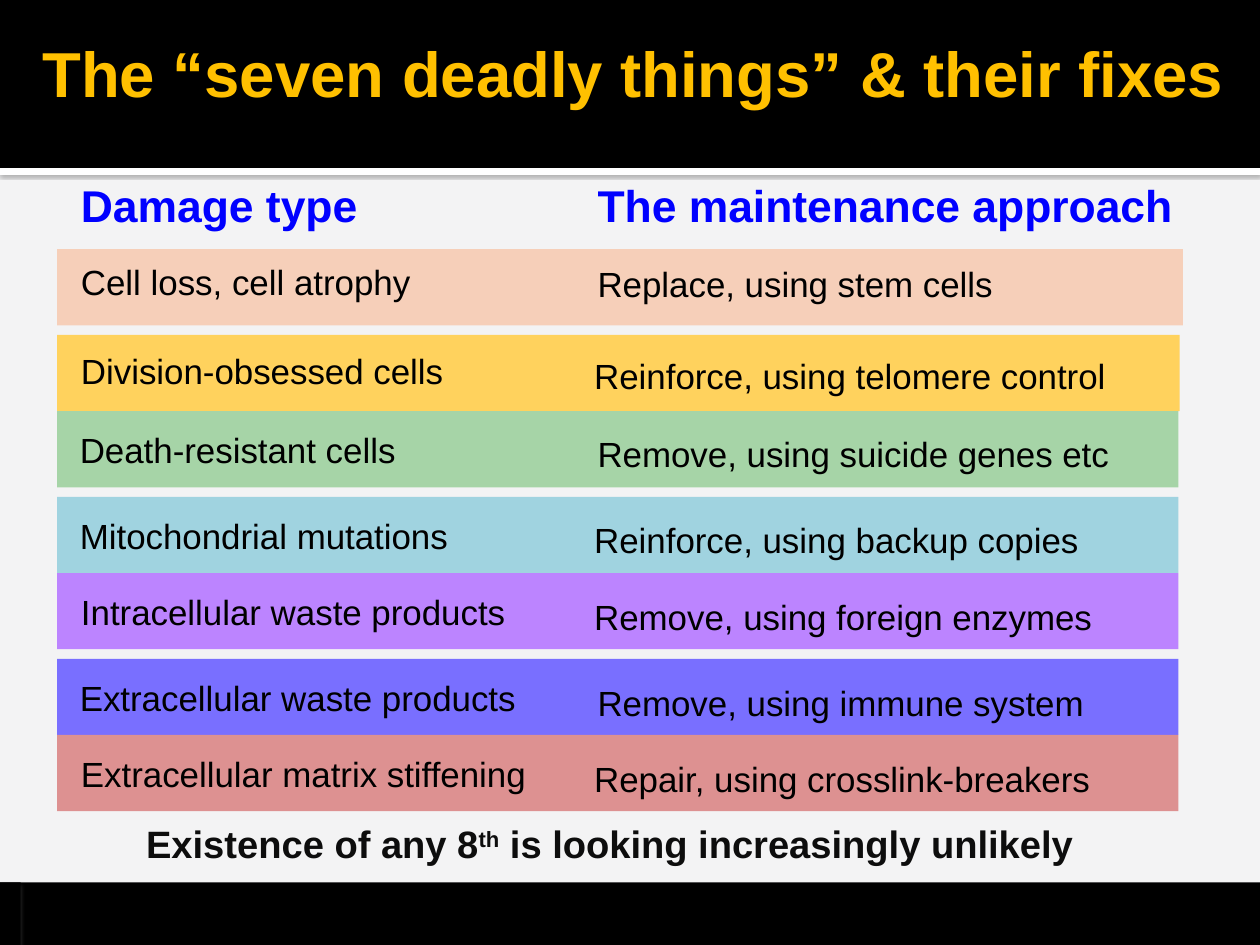
from lxml import etree
from pptx import Presentation
from pptx.dml.color import RGBColor
from pptx.enum.shapes import MSO_SHAPE as SHAPE
from pptx.enum.text import MSO_ANCHOR as ANCHOR, MSO_AUTO_SIZE as AUTO, PP_ALIGN as ALIGN
from pptx.oxml.ns import qn
from pptx.util import Inches, Pt

COLORS = {
    "background": "F3F3F4", "black": "000000", "white": "FFFFFF",
    "shadow": "808080", "title": "FFC000", "heading": "0000FF", "closing": "0D0D0D",
    "peach": "F6CFB9", "yellow": "FFD25D", "green": "A6D4A7", "blue": "A0D3E0",
    "purple": "BC84FF", "indigo": "796FFF", "red": "DD9191",
}
FONT = "Arial"
CM_PER_INCH = 2.54
SLIDE_W, SLIDE_H = 28 / CM_PER_INCH, 21 / CM_PER_INCH
HEADER_H, FOOTER_TOP, FOOTER_H = 1.47, 7.72, 0.55
ROW_LEFT, ROW_TOP, ROW_H, PAIR_GAP = 0.5, 2.18, 2 / 3, 1 / 12

# Colour, bar width, then text, left, drop and width of the damage and of its fix
ROWS = [
    ("peach", 9.85, ("Cell loss, cell atrophy", 0.61, 0.08, 3.48),
     ("Replace, using stem cells", 5.13, 0.07, 4.64)),
    ("yellow", 9.82, ("Division-obsessed cells", 0.61, 0.11, 3.48),
     ("Reinforce, using telomere control", 5.1, 0.12, 4.92)),
    ("green", 9.81, ("Death-resistant cells", 0.6, 0.14, 3.48),
     ("Remove, using suicide genes etc", 5.13, 0.14, 4.97)),
    ("blue", 9.81, ("Mitochondrial mutations", 0.6, 0.14, 3.48),
     ("Reinforce, using backup copies", 5.1, 0.14, 4.92)),
    ("purple", 9.81, ("Intracellular waste products", 0.61, 0.14, 4.15),
     ("Remove, using foreign enzymes", 5.1, 0.15, 4.92)),
    ("indigo", 9.81, ("Extracellular waste products", 0.6, 0.14, 4.17),
     ("Remove, using immune system", 5.13, 0.15, 5.47)),
    ("red", 9.81, ("Extracellular matrix stiffening", 0.61, 0.14, 4.32),
     ("Repair, using crosslink-breakers", 5.1, 0.15, 5)),
]
HEADINGS = [("Damage type", 0.61, 2.9), ("The maintenance approach", 5.13, 5.38)]


def rgb(name):
    """Return the named colour."""
    return RGBColor.from_string(COLORS[name])


def add_bar(s, left, top, width, height, color):
    """Add a plain filled rectangle."""
    sp = s.shapes.add_shape(SHAPE.RECTANGLE, Inches(left), Inches(top),
                            Inches(width), Inches(height))
    sp.shadow.inherit = False
    sp.fill.solid()
    sp.fill.fore_color.rgb = rgb(color)
    sp.line.fill.background()
    return sp


def add_shadow(sp, alpha, blur, dist):
    """Give a shape a soft shadow that falls straight down."""
    effects = sp._element.spPr.find(qn("a:effectLst"))
    shadow = etree.SubElement(effects, qn("a:outerShdw"), blurRad=str(Pt(blur)),
                              dist=str(Pt(dist)), dir="5400000", rotWithShape="0")
    color = etree.SubElement(shadow, qn("a:srgbClr"), val=COLORS["shadow"])
    etree.SubElement(color, qn("a:alpha"), val=str(alpha * 1000))


def add_run(p, text, size=22, color="black", bold=False, baseline=0):
    """Add a formatted run to a paragraph."""
    r = p.add_run()
    r.text = text
    r.font.name = FONT
    r.font.size = Pt(size)
    r.font.bold = bold
    r.font.color.rgb = rgb(color)
    if baseline:
        r.font._element.set("baseline", str(baseline * 1000))


def add_text(s, text, left, top, width, height, spacing=None, **style):
    """Add a wrapped text box and return its paragraph."""
    tf = s.shapes.add_textbox(Inches(left), Inches(top), Inches(width), Inches(height)).text_frame
    tf.word_wrap = True
    p = tf.paragraphs[0]
    if spacing:
        p.line_spacing = spacing
    add_run(p, text, **style)
    return p


def add_frame(s):
    """Add the black header and footer with the white rule between."""
    add_bar(s, 0, FOOTER_TOP, SLIDE_W, FOOTER_H, "black")
    rule = add_bar(s, 0, HEADER_H, SLIDE_W, 0.06, "white")
    add_shadow(rule, 60, 2.5, 0.8)
    header = add_bar(s, 0, 0, SLIDE_W, HEADER_H, "black")
    corner = add_bar(s, 0, FOOTER_TOP, 0.18, FOOTER_H, "black")
    add_shadow(corner, 38, 3.1, 2)
    return header


def set_title(s, header, text):
    """Place the title in front of the header."""
    title = s.shapes.title
    header._element.addnext(title._element)
    title.left, title.top = Inches(0), Inches(-0.12)
    title.width, title.height = Inches(SLIDE_W), Inches(1.51)
    tf = title.text_frame
    tf.auto_size = AUTO.NONE
    tf.word_wrap = True
    tf.vertical_anchor = ANCHOR.MIDDLE
    tf.margin_left = Inches(0.11)
    tf.margin_right = tf.margin_top = tf.margin_bottom = Inches(0.06)
    p = tf.paragraphs[0]
    p.alignment = ALIGN.CENTER
    add_run(p, text, size=40, color="title", bold=True)


def add_rows(s):
    """Add the coloured rows, with a gap before every second one."""
    for i, (color, bar_width, damage, fix) in enumerate(ROWS):
        top = ROW_TOP + i * ROW_H + (i + 1) // 2 * PAIR_GAP
        add_bar(s, ROW_LEFT, top, bar_width, ROW_H, color)
        for (text, left, drop, width), height, spacing in ((damage, 0.45, 0.93), (fix, 0.47, None)):
            add_text(s, text, left, top + drop, width, height, spacing)


def main():
    """Build and save the slide."""
    prs = Presentation()
    prs.slide_width, prs.slide_height = Inches(SLIDE_W), Inches(SLIDE_H)
    s = prs.slides.add_slide(prs.slide_layouts[5])
    s.background.fill.solid()
    s.background.fill.fore_color.rgb = rgb("background")
    header = add_frame(s)
    set_title(s, header, "The “seven deadly things” & their fixes")
    for text, left, width in HEADINGS:
        add_text(s, text, left, 1.55, width, 0.55, spacing=0.93,
                 size=28, color="heading", bold=True)
    add_rows(s)
    closing = {"size": 24, "color": "closing", "bold": True}
    p = add_text(s, "Existence of any 8", 1.18, 7.13, 8.58, 0.51, **closing)
    add_run(p, "th", baseline=30, **closing)
    add_run(p, " is looking increasingly unlikely", **closing)
    prs.save("out.pptx")


if __name__ == "__main__":
    main()
